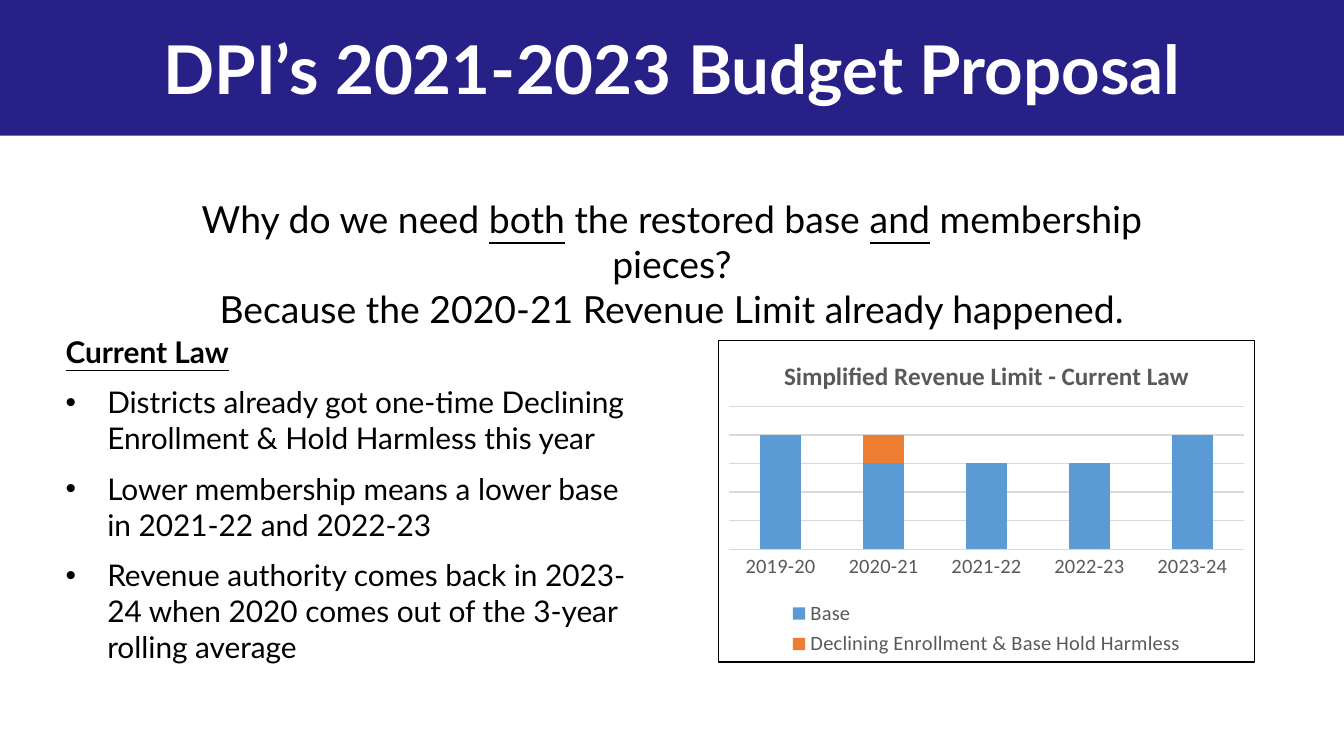
from lxml import etree
from pptx import Presentation
from pptx import util as u
from pptx.chart.data import CategoryChartData
from pptx.dml.color import RGBColor
from pptx.enum import chart as charts, shapes, text
from pptx.oxml import parse_xml
from pptx.oxml.ns import nsdecls, qn

NAVY, WHITE, BLACK = "262087", "FFFFFF", "000000"
GRAY, GRID = "595959", "D9D9D9"
BASE_BLUE, EXTRA_ORANGE = "5B9BD5", "ED7D31"

YEARS = ["2019-20", "2020-21", "2021-22", "2022-23", "2023-24"]
SERIES = [
    ("Base", [100, 99, 99, 99, 100], BASE_BLUE),
    ("Declining Enrollment & Base Hold Harmless", [0, 1, 0, 0, 0], EXTRA_ORANGE),
]
POINTS = [
    "Districts already got one-time Declining Enrollment & Hold Harmless this year",
    "Lower membership means a lower base in 2021-22 and 2022-23",
    "Revenue authority comes back in 2023-24 when 2020 comes out of the 3-year rolling average",
]


def color(value):
    return RGBColor.from_string(value)


def place(*lengths):
    return [u.Inches(length) for length in lengths]


def set_font(font, size, fill=BLACK, name="Lato", **extra):
    values = {"size": u.Pt(size), "name": name, **extra}
    for key, value in values.items():
        setattr(font, key, value)
    font.color.rgb = color(fill)


def set_line(line, fill):
    line.color.rgb = color(fill)
    line.width = u.Pt(0.75)


def add_band(page):
    band = page.shapes.add_shape(shapes.MSO_SHAPE.RECTANGLE, *place(-0.01, 0, 10.01, 1.01))
    band.shadow.inherit = False
    band.fill.solid()
    band.fill.fore_color.rgb = color(NAVY)
    band.line.fill.background()


def add_box(page, at, anchor=text.MSO_ANCHOR.TOP):
    frame = page.shapes.add_textbox(*place(*at)).text_frame
    frame.word_wrap = True
    frame.vertical_anchor = anchor
    return frame


def add_spans(para, spans, size, fill=BLACK, **format_values):
    """Each span is a pair of wording and whether it is underlined."""
    for wording, underline in spans:
        span = para.add_run()
        span.text = wording
        set_font(span.font, size, fill, underline=underline, **format_values)


def add_bullet(para):
    props = para._p.get_or_add_pPr()
    props.set("marL", str(u.Inches(0.31)))
    props.set("indent", str(u.Inches(-0.31)))
    props.append(parse_xml(f'<a:buFont {nsdecls("a")} typeface="Arial"/>'))
    etree.SubElement(props, qn("a:buChar")).set("char", "•")


def add_revenue_chart(page):
    data = CategoryChartData()
    data.categories = YEARS
    for name, values, _ in SERIES:
        data.add_series(name, values)
    chart = page.shapes.add_chart(
        charts.XL_CHART_TYPE.COLUMN_STACKED, *place(5.34, 2.53, 4, 2.4), data).chart
    set_font(chart.font, 11, GRAY, "Calibri")

    # Title and legend
    title = chart.chart_title.text_frame.paragraphs[0]
    add_spans(title, [("Simplified Revenue Limit - Current Law", False)], 13.5, GRAY,
              name="Calibri", bold=True)
    chart.has_legend = True
    chart.legend.position = charts.XL_LEGEND_POSITION.BOTTOM
    chart.legend.include_in_layout = False
    set_font(chart.legend.font, 11, GRAY, "Calibri")

    # Columns
    plot = chart.plots[0]
    for key, value in {"gap_width": 150, "overlap": 100, "vary_by_categories": False}.items():
        setattr(plot, key, value)
    for series, (_, _, fill) in zip(plot.series, SERIES):
        series.format.fill.solid()
        series.format.fill.fore_color.rgb = color(fill)

    # Axes
    years = chart.category_axis
    years.major_tick_mark = charts.XL_TICK_MARK.NONE
    set_font(years.tick_labels.font, 11, GRAY, "Calibri")
    set_line(years.format.line, GRID)
    limits = chart.value_axis
    scale = {"minimum_scale": 96, "maximum_scale": 101, "major_unit": 1,
             "has_major_gridlines": True, "visible": False}
    for key, value in scale.items():
        setattr(limits, key, value)
    set_line(limits.major_gridlines.format.line, GRID)

    # White chart area with a black border
    area = parse_xml(
        f'<c:spPr {nsdecls("c", "a")}><a:solidFill><a:srgbClr val="{WHITE}"/></a:solidFill>'
        f'<a:ln w="{u.Pt(0.75)}"><a:solidFill><a:srgbClr val="{BLACK}"/></a:solidFill></a:ln>'
        '</c:spPr>')
    chart._chartSpace.chart.addnext(area)


def main():
    deck = Presentation()
    # Widescreen, 16 by 9
    deck.slide_width = u.Inches(10)
    deck.slide_height = u.Inches(10 * 9 / 16)
    page = deck.slides.add_slide(deck.slide_layouts[6])

    # Heading
    add_band(page)
    heading = add_box(page, (0, 0, 10, 1.01), text.MSO_ANCHOR.MIDDLE).paragraphs[0]
    heading.alignment = text.PP_ALIGN.CENTER
    add_spans(heading, [("DPI’s 2021-2023 Budget Proposal", False)], 36, WHITE, bold=True)

    add_revenue_chart(page)

    # Question and answer
    question = add_box(page, (0.96, 1.41, 8.08, 0.77))
    lines = [
        [("Why do we need ", False), ("both", True), (" the restored base ", False),
         ("and", True), (" membership pieces?", False)],
        [("Because the 2020-21 Revenue Limit already happened.", False)],
    ]
    for number, spans in enumerate(lines):
        para = question.add_paragraph() if number else question.paragraphs[0]
        para.alignment = text.PP_ALIGN.CENTER
        add_spans(para, spans, 20)

    # Current law points
    law = add_box(page, (0.39, 2.43, 4.53, 2.59))
    add_spans(law.paragraphs[0], [("Current Law", True)], 16, bold=True)
    for point in POINTS:
        para = law.add_paragraph()
        add_bullet(para)
        add_spans(para, [(point, False)], 16)
    for para in law.paragraphs:
        para.space_after = u.Pt(8)

    deck.save("out.pptx")


if __name__ == "__main__":
    main()
